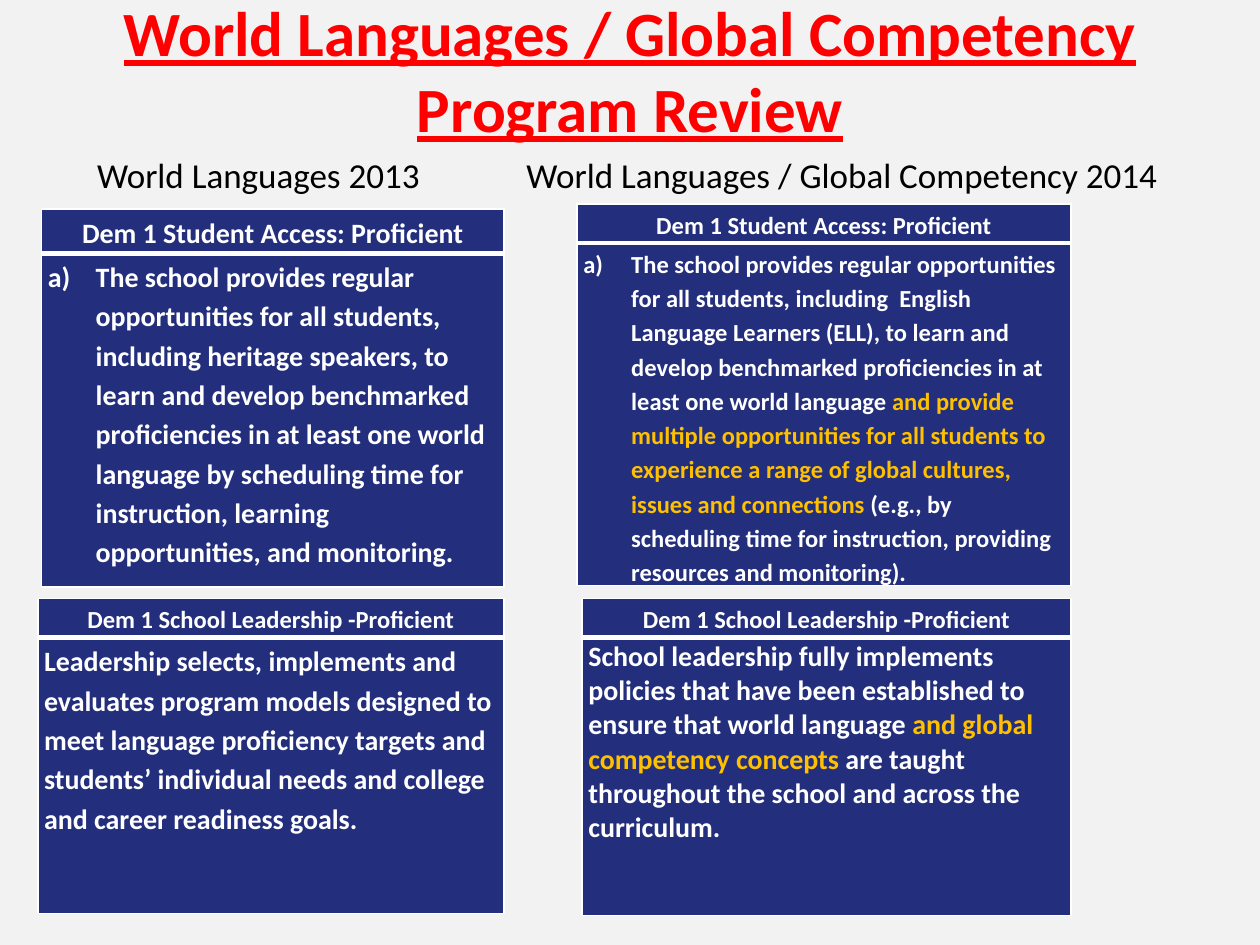
from lxml import etree
from pptx import Presentation
from pptx import util as u
from pptx.dml.color import RGBColor
from pptx.enum import text
from pptx.oxml.ns import qn

HUES = {"back": "F2F2F2", "navy": "232F7C", "white": "FFFFFF",
        "gold": "FFC000", "red": "FF0000", "black": "000000"}
FACE = "Calibri"
HANG = 0.38


def rgb(name):
    return RGBColor.from_string(HUES[name])


def style(para, size, hue, bold=False):
    font = para.font
    font.name, font.size, font.bold = FACE, u.Pt(size), bold
    font.color.rgb = rgb(hue)


def place(shape, box):
    shape.left, shape.top, shape.width, shape.height = map(u.Inches, box)


def bullet(para, tag, hang, **attrs):
    """Set a hanging indent and the kind of bullet."""
    props = para._p.get_or_add_pPr()
    props.set("marL", str(u.Inches(hang)))
    props.set("indent", str(-u.Inches(hang)))
    etree.SubElement(props, qn(tag), attrs)


def edge(cell, low):
    """Draw white borders, with the given width at the bottom."""
    props = cell._tc.get_or_add_tcPr()
    for side, wide in zip("LRTB", (1, 1, 1, low)):
        line = etree.SubElement(props, qn(f"a:ln{side}"), w=str(u.Pt(wide)))
        fill = etree.SubElement(line, qn("a:solidFill"))
        etree.SubElement(fill, qn("a:srgbClr"), val=HUES["white"])


def panel(slide, box, head, size, title, parts, body=16, space=1.15, list_=False):
    """A heading cell over a body cell; parts are (words, hue) pairs."""
    grid = slide.shapes.add_table(2, 1, *map(u.Inches, box)).table
    grid.rows[0].height = u.Inches(head)
    grid.rows[1].height = u.Inches(box[3] - head)
    rows = ((size, [(title, "white")], 3, 1.15), (body, parts, 1, space))
    for row, (points, runs, low, gap) in enumerate(rows):
        cell = grid.cell(row, 0)
        edge(cell, low)
        cell.fill.solid()
        cell.fill.fore_color.rgb = rgb("navy")
        cell.margin_left = cell.margin_right = u.Inches(0.05)
        cell.margin_top = cell.margin_bottom = u.Inches(0.02)
        para = cell.text_frame.paragraphs[0]
        para.line_spacing = gap
        if row == 0:
            para.alignment = text.PP_ALIGN.CENTER
        elif list_:
            bullet(para, "a:buAutoNum", HANG, type="alphaLcParenR")
        style(para, points, "white", True)
        for words, hue in runs:
            run = para.add_run()
            run.text = words
            if hue != "white":
                run.font.color.rgb = rgb(hue)


def heading(slide, box):
    title = slide.shapes.title
    place(title, box)
    frame = title.text_frame
    frame.text = "World Languages / Global Competency Program Review"
    frame.auto_size = text.MSO_AUTO_SIZE.NONE
    frame.vertical_anchor = text.MSO_ANCHOR.MIDDLE
    para = frame.paragraphs[0]
    para.alignment = text.PP_ALIGN.CENTER
    style(para, 36, "red", True)
    para.font.underline = True


def labels(slide, left, right):
    # Earlier year, in the body placeholder
    body = slide.placeholders[1]
    place(body, left)
    body.text_frame.text = "World Languages 2013"
    body.text_frame.auto_size = text.MSO_AUTO_SIZE.NONE
    para = body.text_frame.paragraphs[0]
    bullet(para, "a:buNone", 0.19)
    style(para, 20, "black")
    # Later year
    box = slide.shapes.add_textbox(*map(u.Inches, right))
    box.text_frame.text = "World Languages / Global Competency 2014"
    box.text_frame.word_wrap = False
    style(box.text_frame.paragraphs[0], 20, "black")


def main():
    deck = Presentation()
    deck.slide_width, deck.slide_height = u.Inches(10), u.Inches(7.5)
    slide = deck.slides.add_slide(deck.slide_layouts[1])
    slide.background.fill.solid()
    slide.background.fill.fore_color.rgb = rgb("back")

    heading(slide, (0, 0.2, 10, 0.7))
    labels(slide, (0.67, 1.17, 2.83, 0.5), (4.08, 1.17, 5.25, 0.44))

    # Student access, 2013 and 2014
    access = "Dem 1 Student Access: Proficient"
    panel(slide, (0.33, 1.66, 3.67, 3), 0.35, 16, access, [
        ("The school provides regular opportunities for all students, "
         "including heritage speakers, to learn and develop benchmarked "
         "proficiencies in at least one world language by scheduling time "
         "for instruction, learning opportunities, and monitoring.", "white"),
    ], list_=True)
    panel(slide, (4.58, 1.62, 3.92, 2.96), 0.28, 14, access, [
        ("The school provides regular opportunities for all students, "
         "including  English Language Learners (ELL), to learn and develop "
         "benchmarked proficiencies in at least one world language ", "white"),
        ("and provide multiple opportunities for all students to experience "
         "a range of global cultures, issues and connections", "gold"),
        (" (e.g., by scheduling time for instruction, providing resources "
         "and monitoring).", "white"),
    ], body=14, list_=True)

    # School leadership, 2013 and 2014
    lead = "Dem 1 School Leadership -Proficient"
    panel(slide, (0.3, 4.75, 3.7, 2.5), 0.31, 14, lead, [
        ("Leadership selects, implements and evaluates program models "
         "designed to meet language proficiency targets and students’ "
         "individual needs and college and career readiness goals.", "white"),
    ])
    panel(slide, (4.62, 4.75, 3.88, 2.5), 0.29, 14, lead, [
        ("School leadership fully implements policies that have been "
         "established to ensure that world language ", "white"),
        ("and global competency concepts", "gold"),
        (" are taught throughout the school and across the curriculum.",
         "white"),
    ], space=1.0)

    deck.save("out.pptx")


if __name__ == "__main__":
    main()
